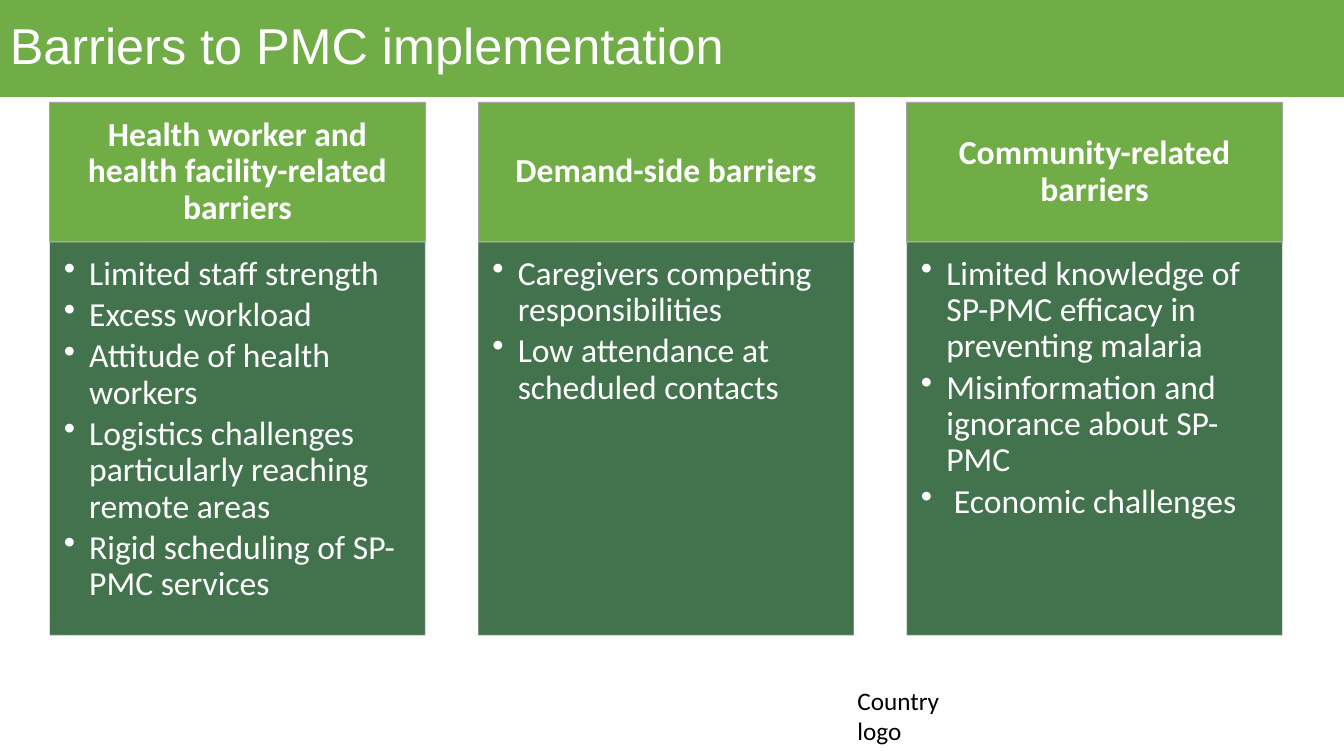
from lxml import etree
from pptx import Presentation
from pptx.dml.color import RGBColor
from pptx.enum.shapes import MSO_SHAPE
from pptx.enum.text import MSO_ANCHOR, PP_ALIGN
from pptx.oxml.ns import qn
from pptx.util import Cm, Pt

RECTANGLE = MSO_SHAPE.RECTANGLE
TOP, MIDDLE = MSO_ANCHOR.TOP, MSO_ANCHOR.MIDDLE
LEFT, CENTER = PP_ALIGN.LEFT, PP_ALIGN.CENTER

COLORS = {
    "green": "70AD47",
    "dark green": "2E643A",
    "grey": "A5A5A5",
    "light grey": "E1E1E1",
    "white": "FFFFFF",
    "black": "000000",
}

COLUMNS = [
    ("Health worker and health facility-related barriers", [
        "Limited staff strength",
        "Excess workload",
        "Attitude of health workers",
        "Logistics challenges particularly reaching remote areas",
        "Rigid scheduling of SP-PMC services",
    ]),
    ("Demand-side barriers", [
        "Caregivers competing responsibilities",
        "Low attendance at scheduled contacts",
    ]),
    ("Community-related barriers", [
        "Limited knowledge of SP-PMC efficacy in preventing malaria",
        "Misinformation and ignorance about SP-PMC",
        " Economic challenges",
    ]),
]

COLUMN_LEFT, COLUMN_PITCH, COLUMN_WIDTH = 1.25, 10.8, 9.47
HEADER_TOP, HEADER_HEIGHT, BODY_HEIGHT = 2.57, 3.53, 9.91
BULLET_INDENT = Cm(0.64)


def add_box(left, top, width, height, fill, line, anchor, margins, opacity=None):
    """Add a filled rectangle and return its text frame."""
    shape = slide.shapes.add_shape(RECTANGLE, Cm(left), Cm(top), Cm(width), Cm(height))
    shape.shadow.inherit = False
    shape.fill.solid()
    shape.fill.fore_color.rgb = RGBColor.from_string(COLORS[fill])
    if line:
        shape.line.color.rgb = RGBColor.from_string(COLORS[line])
        shape.line.width = Pt(0.5)
    else:
        shape.line.fill.background()
    if opacity:
        for color in shape._element.spPr.iter(qn("a:srgbClr")):
            etree.SubElement(color, qn("a:alpha"), val=str(opacity * 1000))
    frame = shape.text_frame
    frame.word_wrap = True
    frame.vertical_anchor = anchor
    (frame.margin_left, frame.margin_top,
     frame.margin_right, frame.margin_bottom) = map(Cm, margins)
    return frame


def write(paragraph, text, size, font="Calibri", color="white", bold=False,
          align=LEFT, spacing=0.9, after=0):
    """Format a paragraph and add its run."""
    paragraph.alignment = align
    paragraph.line_spacing = spacing
    paragraph.space_after = Pt(after)
    run = paragraph.add_run()
    run.text = text
    run.font.size = Pt(size)
    run.font.name = font
    run.font.bold = bold
    run.font.color.rgb = RGBColor.from_string(COLORS[color])


presentation = Presentation()
presentation.slide_width = Cm(33.87)
presentation.slide_height = Cm(19.05)
slide = presentation.slides.add_slide(presentation.slide_layouts[6])

# Footer label
label = slide.shapes.add_textbox(Cm(21.36), Cm(17.15), Cm(3.58), Cm(1.8))
label.text_frame.word_wrap = True
write(label.text_frame.paragraphs[0], "Country logo", 18, color="black", spacing=1.0)

# Title bar
title = add_box(0, 0, 33.87, 2.44, "green", None, MIDDLE, (0.25, 0.13, 0.25, 0.13))
write(title.paragraphs[0], "Barriers to PMC implementation", 36, font="Arial", after=8)

# Barrier columns
for index, (heading, barriers) in enumerate(COLUMNS):
    left = COLUMN_LEFT + index * COLUMN_PITCH

    header = add_box(left, HEADER_TOP, COLUMN_WIDTH, HEADER_HEIGHT,
                     "green", "grey", MIDDLE, (0.48, 0.28, 0.48, 0.28))
    write(header.paragraphs[0], heading, 24, bold=True, align=CENTER)

    body = add_box(left, HEADER_TOP + HEADER_HEIGHT, COLUMN_WIDTH, BODY_HEIGHT,
                   "dark green", "light grey", TOP, (0.36, 0.36, 0.48, 0.53), opacity=90)
    for number, barrier in enumerate(barriers):
        paragraph = body.add_paragraph() if number else body.paragraphs[0]
        write(paragraph, barrier, 24, after=3.6)
        paragraph.level = 1
        properties = paragraph._p.get_or_add_pPr()
        properties.set("marL", str(BULLET_INDENT))
        properties.set("indent", str(-BULLET_INDENT))
        etree.SubElement(properties, qn("a:buChar"), char="•")

presentation.save("out.pptx")
